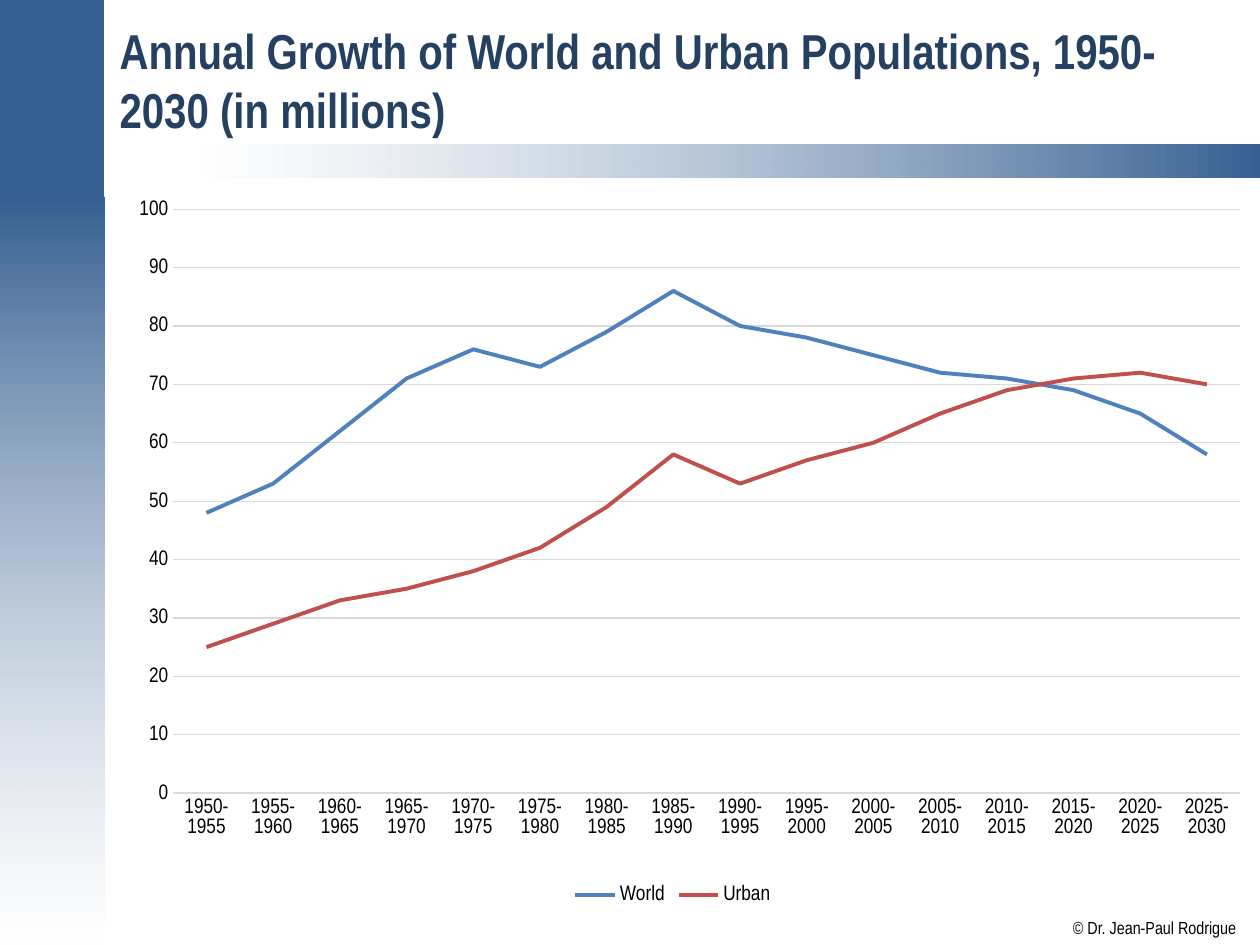
from dataclasses import dataclass

from lxml.etree import SubElement
from pptx import Presentation
from pptx.chart.data import CategoryChartData
from pptx.dml.color import RGBColor
from pptx.enum.chart import XL_CHART_TYPE, XL_LEGEND_POSITION, XL_TICK_MARK
from pptx.enum.shapes import MSO_SHAPE
from pptx.enum.text import MSO_ANCHOR, MSO_AUTO_SIZE, PP_ALIGN
from pptx.oxml import parse_xml
from pptx.oxml.ns import nsdecls, qn
from pptx.util import Emu, Pt


@dataclass(frozen=True)
class Theme:
    font: str = "Arial Narrow"
    band: RGBColor = RGBColor(0x37, 0x60, 0x92)
    fade: RGBColor = RGBColor(0xFF, 0xFF, 0xFF)
    title: RGBColor = RGBColor(0x25, 0x40, 0x61)
    text: RGBColor = RGBColor(0, 0, 0)
    grid: RGBColor = RGBColor(0xD9, 0xD9, 0xD9)
    world: RGBColor = RGBColor(0x4F, 0x81, 0xBD)
    urban: RGBColor = RGBColor(0xC0, 0x50, 0x4D)
    title_size: int = 28
    axis_size: int = 12
    credit_size: int = 10


THEME = Theme()
EMU_PER_PX = 914400 / 126
TITLE = "Annual Growth of World and Urban Populations, 1950-2030 (in millions)"
CREDIT = "© Dr. Jean-Paul Rodrigue"
PERIODS = [f"{year}-{year + 5}" for year in range(1950, 2030, 5)]
GROWTH = {
    "World": (THEME.world, [48, 53, 62, 71, 76, 73, 79, 86, 80, 78, 75, 72, 71, 69, 65, 58]),
    "Urban": (THEME.urban, [25, 29, 33, 35, 38, 42, 49, 58, 53, 57, 60, 65, 69, 71, 72, 70]),
}
PLOT_LAYOUT = {"x": 0.06, "y": 0.04, "w": 0.94, "h": 0.8}


def px(length):
    return Emu(round(length * EMU_PER_PX))


def box(*lengths):
    return [px(length) for length in lengths]


def set_attributes(target, values):
    for name, value in values.items():
        setattr(target, name, value)


def format_font(font, size, color=THEME.text, bold=False):
    set_attributes(font, {"name": THEME.font, "size": Pt(size), "bold": bold})
    font.color.rgb = color


def add_band(slide, bounds):
    band = slide.shapes.add_shape(MSO_SHAPE.RECTANGLE, *box(*bounds))
    band.shadow.inherit = False
    band.line.fill.background()
    band.fill.solid()
    band.fill.fore_color.rgb = THEME.band
    return band


def add_fading_band(slide, bounds, colors, angle, clear_percent):
    """Add a band whose white end is partly transparent."""
    fill = add_band(slide, bounds).fill
    fill.gradient()
    fill.gradient_angle = angle
    for stop, color in zip(fill.gradient_stops, colors):
        stop.color.rgb = color
    for color in fill._xPr.iter(qn("a:srgbClr")):
        if color.get("val") == str(THEME.fade):
            SubElement(color, qn("a:alpha"), val=str(clear_percent * 1000))


def set_title(slide):
    title = slide.shapes.title
    slide.shapes._spTree.append(title._element)
    set_attributes(title, dict(zip(("left", "top", "width", "height"), box(107, 14, 1132, 131))))
    frame = title.text_frame
    frame.text = TITLE
    set_attributes(frame, {
        "word_wrap": True,
        "auto_size": MSO_AUTO_SIZE.NONE,
        "vertical_anchor": MSO_ANCHOR.MIDDLE,
    })
    paragraph = frame.paragraphs[0]
    paragraph.alignment = PP_ALIGN.LEFT
    format_font(paragraph.runs[0].font, THEME.title_size, THEME.title, bold=True)


def add_credit(slide):
    frame = slide.shapes.add_textbox(*box(1073, 917, 164, 21)).text_frame
    frame.text = CREDIT
    margins = {f"margin_{side}": 0 for side in ("left", "top", "right", "bottom")}
    set_attributes(frame, margins | {
        "word_wrap": False,
        "auto_size": MSO_AUTO_SIZE.SHAPE_TO_FIT_TEXT,
    })
    format_font(frame.paragraphs[0].runs[0].font, THEME.credit_size)


def format_line(line, color, width):
    line.color.rgb = color
    line.width = Pt(width)


def format_axes(chart):
    for axis in (chart.category_axis, chart.value_axis):
        set_attributes(axis, {
            "major_tick_mark": XL_TICK_MARK.NONE,
            "minor_tick_mark": XL_TICK_MARK.NONE,
        })
        format_font(axis.tick_labels.font, THEME.axis_size)
    format_line(chart.category_axis.format.line, THEME.grid, 0.75)
    set_attributes(chart.value_axis, {
        "minimum_scale": 0, "maximum_scale": 100, "major_unit": 10,
        "has_major_gridlines": True,
    })
    chart.value_axis.format.line.fill.background()
    format_line(chart.value_axis.major_gridlines.format.line, THEME.grid, 0.75)


def place_plot(chart):
    """Fix the inner plot area as fractions of the chart."""
    plot_area = chart._chartSpace.chart.plotArea
    for layout in plot_area.findall(qn("c:layout")):
        plot_area.remove(layout)
    modes = "".join(f'<c:{axis}Mode val="edge"/>' for axis in "xy")
    sizes = "".join(f'<c:{name} val="{value}"/>' for name, value in PLOT_LAYOUT.items())
    plot_area.insert(0, parse_xml(
        f'<c:layout {nsdecls("c")}><c:manualLayout><c:layoutTarget val="inner"/>'
        f"{modes}{sizes}</c:manualLayout></c:layout>"
    ))


def add_growth_chart(slide):
    data = CategoryChartData()
    data.categories = PERIODS
    for name, (_, values) in GROWTH.items():
        data.add_series(name, values)
    chart = slide.shapes.add_chart(
        XL_CHART_TYPE.LINE, *box(105, 180, 1136, 730), data
    ).chart
    chart.has_title = False
    format_font(chart.font, THEME.credit_size)
    chart.plots[0].vary_by_categories = False
    for series in chart.plots[0].series:
        series.smooth = False
        format_line(series.format.line, GROWTH[series.name][0], 2.25)
    format_axes(chart)
    place_plot(chart)
    chart.has_legend = True
    set_attributes(chart.legend, {
        "position": XL_LEGEND_POSITION.BOTTOM,
        "include_in_layout": False,
    })
    format_font(chart.legend.font, THEME.axis_size)


def main():
    presentation = Presentation()
    set_attributes(presentation, {"slide_width": px(1260), "slide_height": px(945)})
    slide = presentation.slides.add_slide(presentation.slide_layouts[5])
    add_fading_band(slide, (-1, 198, 105, 747), (THEME.band, THEME.fade), 270, 51)
    add_fading_band(slide, (198, 145, 1062, 33), (THEME.fade, THEME.band), 0, 50)
    add_band(slide, (-1, -1, 105, 199))
    add_credit(slide)
    set_title(slide)
    add_growth_chart(slide)
    presentation.save("out.pptx")


if __name__ == "__main__":
    main()
